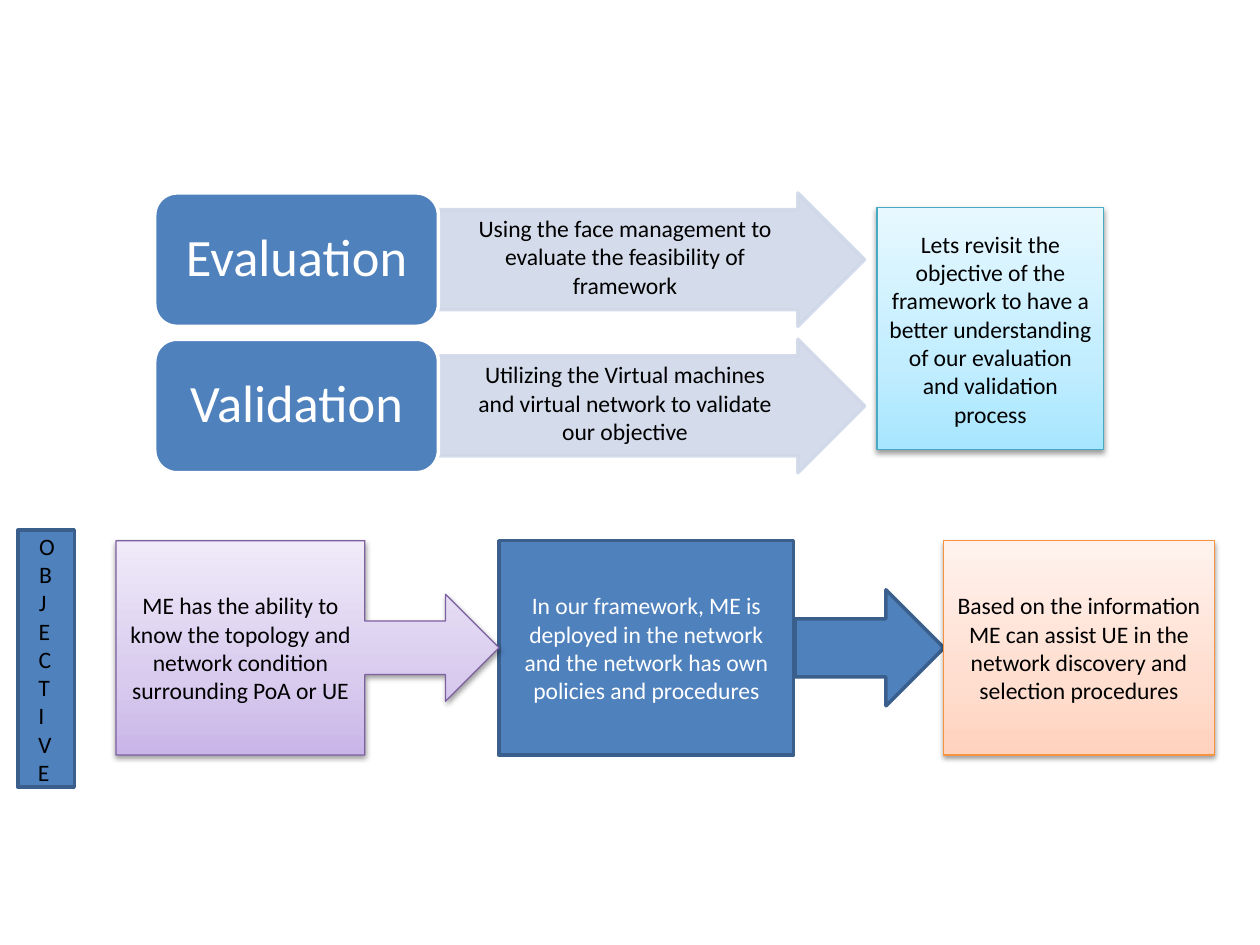
from lxml.etree import SubElement
from pptx import Presentation
from pptx.dml.color import RGBColor
from pptx.enum.shapes import MSO_SHAPE
from pptx.enum.text import MSO_ANCHOR, PP_ALIGN
from pptx.oxml.ns import qn
from pptx.util import Cm, Pt

BLACK = RGBColor(0x00, 0x00, 0x00)
WHITE = RGBColor(0xFF, 0xFF, 0xFF)
BLUE = RGBColor(0x4F, 0x81, 0xBD)
DARK_BLUE = RGBColor(0x3A, 0x5F, 0x8C)
PALE_BLUE = RGBColor(0xD0, 0xD8, 0xE8)
AQUA = RGBColor(0x46, 0xAA, 0xC5)
PURPLE = RGBColor(0x7D, 0x60, 0xA0)
ORANGE = RGBColor(0xF6, 0x92, 0x40)
# Gradient colours run from the bottom edge to the top edge.
AQUA_FADE = (RGBColor(0xA7, 0xE6, 0xFF), RGBColor(0xC1, 0xED, 0xFF), RGBColor(0xE7, 0xF8, 0xFF))
PURPLE_FADE = (RGBColor(0xC9, 0xB5, 0xE8), RGBColor(0xD8, 0xCB, 0xEE), RGBColor(0xF0, 0xEA, 0xF9))
ORANGE_FADE = (RGBColor(0xFF, 0xD2, 0xBD), RGBColor(0xFF, 0xDE, 0xD0), RGBColor(0xFF, 0xF2, 0xED))
FADE_POSITIONS = (0, 35, 100)

FONT = "Calibri"
BODY_SIZE = 13.5
FIRST_ROW_TOP = 3.89
ROW_PITCH = 2.95
ROW_HEIGHT = 2.69
FLOW_TOP = 10.9
FLOW_HEIGHT = 4.32

STEPS = (
    ("Evaluation", "Using the face management to evaluate the feasibility of framework"),
    ("Validation", "Utilizing the Virtual machines and virtual network to validate our objective"),
)


def write_text(shape, lines, color, size=BODY_SIZE, align=PP_ALIGN.CENTER,
               anchor=MSO_ANCHOR.MIDDLE, line_spacing=None):
    frame = shape.text_frame
    frame.word_wrap = True
    frame.vertical_anchor = anchor
    for index, line in enumerate(lines):
        paragraph = frame.add_paragraph() if index else frame.paragraphs[0]
        paragraph.alignment = align
        paragraph.line_spacing = line_spacing
        run = paragraph.add_run()
        run.text = line
        run.font.name = FONT
        run.font.size = Pt(size)
        run.font.color.rgb = color


def add_box(slide, preset, box, fill, line, line_width=2.0):
    shape = slide.shapes.add_shape(preset, *map(Cm, box))
    shape.shadow.inherit = False
    shape.fill.solid()
    shape.fill.fore_color.rgb = fill
    shape.line.color.rgb = line
    shape.line.width = Pt(line_width)
    return shape


def add_faded_box(slide, preset, box, fade, line, text):
    """Add a captioned shape with a vertical gradient and a soft shadow."""
    shape = add_box(slide, preset, box, fade[0], line, 0.75)
    shape.fill.gradient()
    shape.fill.gradient_angle = 90
    properties = shape.element.spPr
    stops = properties.find(".//" + qn("a:gsLst"))
    stops.clear()
    for position, color in zip(FADE_POSITIONS, fade):
        stop = SubElement(stops, qn("a:gs"), pos=str(position * 1000))
        SubElement(stop, qn("a:srgbClr"), val=str(color))
    shadow = SubElement(properties.find(qn("a:effectLst")), qn("a:outerShdw"),
                        blurRad=str(Pt(3.1)), dist=str(Pt(1.6)), dir="5400000", rotWithShape="0")
    shadow_color = SubElement(shadow, qn("a:srgbClr"), val=str(BLACK))
    SubElement(shadow_color, qn("a:alpha"), val="38000")
    write_text(shape, [text], BLACK)


def add_text_box(slide, box, lines, color, **style):
    text_box = slide.shapes.add_textbox(*map(Cm, box))
    write_text(text_box, lines, color, **style)
    return text_box


def add_step(slide, top, title, description):
    """Add a titled block followed by an arrow that holds its description."""
    arrow = add_box(slide, MSO_SHAPE.RIGHT_ARROW, (8.84, top, 8.59, ROW_HEIGHT), PALE_BLUE, PALE_BLUE)
    arrow.adjustments[0] = 0.75
    arrow.adjustments[1] = 0.5
    for color in arrow.element.spPr.iter(qn("a:srgbClr")):
        SubElement(color, qn("a:alpha"), val="90000")
    add_box(slide, MSO_SHAPE.ROUNDED_RECTANGLE, (3.12, top, 5.72, ROW_HEIGHT), BLUE, WHITE)
    label = add_text_box(slide, (3.25, top + 0.13, 5.46, 2.41), [title], WHITE,
                         size=30, line_spacing=0.9)
    frame = label.text_frame
    frame.margin_left = frame.margin_right = Cm(0.3)
    frame.margin_top = frame.margin_bottom = Cm(0.15)
    add_text_box(slide, (9.35, top + 0.3, 6.5, 1.98), [description], BLACK, anchor=MSO_ANCHOR.TOP)


def add_objective_bar(slide):
    add_box(slide, MSO_SHAPE.RECTANGLE, (0.36, 10.69, 1.14, 5.18), BLUE, DARK_BLUE)
    letters = add_text_box(slide, (0.53, 10.59, 0.76, 5.46), "OBJECTIVE", BLACK,
                           align=PP_ALIGN.LEFT, anchor=MSO_ANCHOR.TOP)
    letters.rotation = 0.3


def add_objective_flow(slide):
    framework = add_box(slide, MSO_SHAPE.RECTANGLE, (10.06, FLOW_TOP, 5.94, FLOW_HEIGHT), BLUE, DARK_BLUE)
    write_text(framework, ["In our framework, ME is deployed in the network and the network "
                           "has own policies and procedures"], WHITE)
    add_faded_box(slide, MSO_SHAPE.RIGHT_ARROW_CALLOUT, (2.34, FLOW_TOP, 7.72, FLOW_HEIGHT),
                  PURPLE_FADE, PURPLE,
                  "ME has the ability to know the topology and network condition surrounding PoA or UE")
    add_box(slide, MSO_SHAPE.RIGHT_ARROW, (16.03, 11.89, 3, 2.34), BLUE, DARK_BLUE)
    add_faded_box(slide, MSO_SHAPE.RECTANGLE, (19.02, FLOW_TOP, 5.46, FLOW_HEIGHT),
                  ORANGE_FADE, ORANGE,
                  "Based on the information ME can assist UE in the network discovery "
                  "and selection procedures")


def main():
    presentation = Presentation()
    presentation.slide_width = Cm(25.4)
    presentation.slide_height = Cm(19.05)
    slide = presentation.slides.add_slide(presentation.slide_layouts[6])
    for row, (title, description) in enumerate(STEPS):
        add_step(slide, FIRST_ROW_TOP + row * ROW_PITCH, title, description)
    add_faded_box(slide, MSO_SHAPE.RECTANGLE, (17.68, 4.19, 4.57, 4.88), AQUA_FADE, AQUA,
                  "Lets revisit the objective of the framework to have a better understanding "
                  "of our evaluation and validation process")
    add_objective_bar(slide)
    add_objective_flow(slide)
    presentation.save("out.pptx")


if __name__ == "__main__":
    main()
